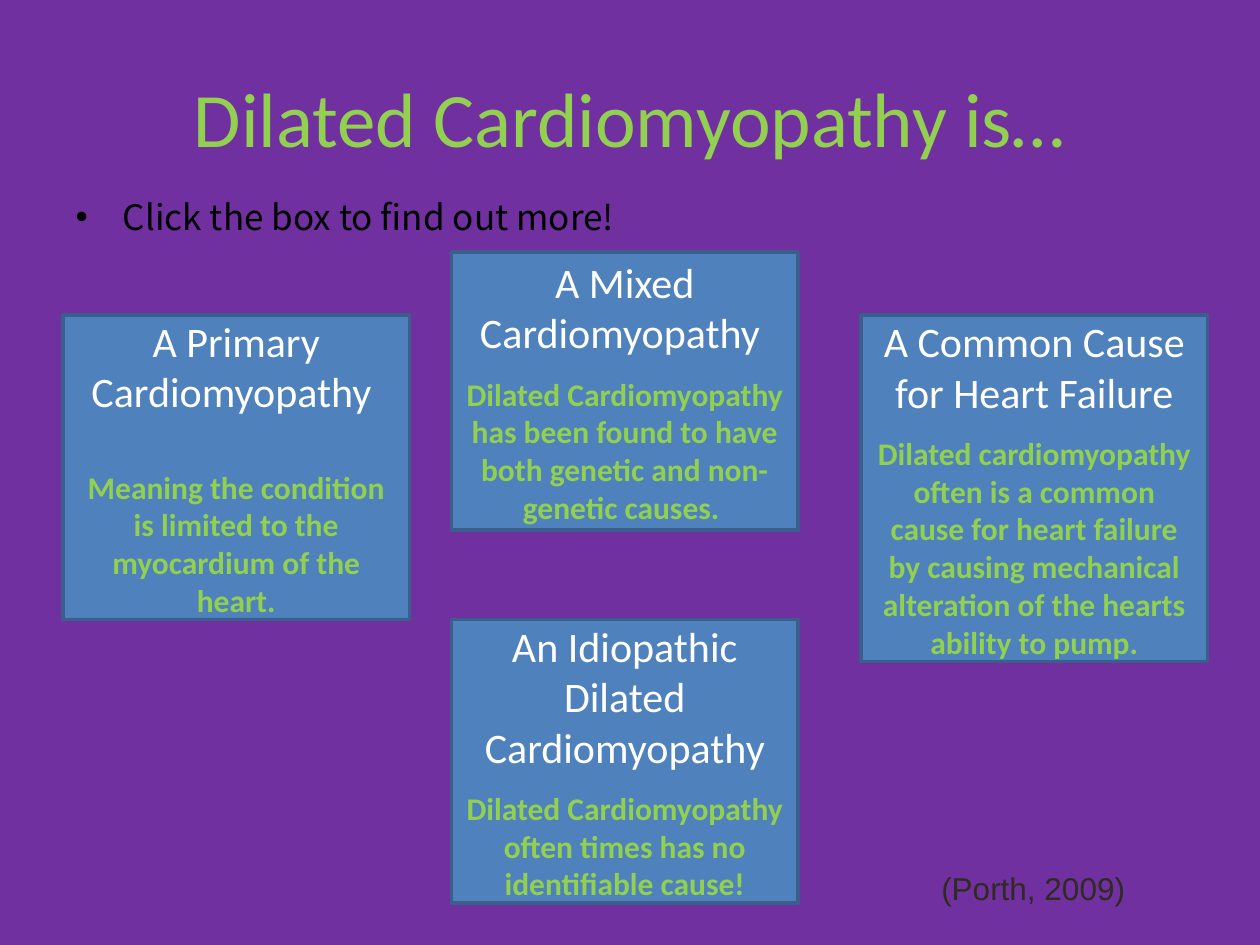
import pptx
import pptx.dml.color
import pptx.enum.shapes
import pptx.enum.text
import pptx.util

RGBColor = pptx.dml.color.RGBColor
ALIGN = pptx.enum.text.PP_ALIGN
ANCHOR = pptx.enum.text.MSO_ANCHOR
AUTO_SIZE = pptx.enum.text.MSO_AUTO_SIZE
Pt = pptx.util.Pt

PURPLE = RGBColor(0x70, 0x30, 0xA0)
GREEN = RGBColor(0x92, 0xD0, 0x50)
BLUE = RGBColor(0x4F, 0x81, 0xBD)
DARK_BLUE = RGBColor(0x3A, 0x5F, 0x8C)
WHITE = RGBColor(0xFF, 0xFF, 0xFF)
BLACK = RGBColor(0, 0, 0)
BROWN = RGBColor(0x2F, 0x2B, 0x20)

COLUMNS, ROWS = 120, 90
BOX_WIDTH = 33
LEFT, MIDDLE, RIGHT = 6, 43, 82

# column, row, height in rows, heading, gap in points, explanation
BOXES = [
    (LEFT, 30, 29, "A Primary Cardiomyopathy ", 29.3,
     "Meaning the condition is limited to the myocardium of the heart."),
    (RIGHT, 30, 33, "A Common Cause for Heart Failure", 9.8,
     "Dilated cardiomyopathy often is a common cause for heart failure by "
     "causing mechanical alteration of the hearts ability to pump."),
    (MIDDLE, 59, 27, "An Idiopathic Dilated Cardiomyopathy", 9.8,
     "Dilated Cardiomyopathy often times has no identifiable cause!"),
    (MIDDLE, 24, 26.5, "A Mixed Cardiomyopathy ", 9.8,
     "Dilated Cardiomyopathy has been found to have both genetic and "
     "non-genetic causes. "),
]


def write(paragraph, text, *, size, color, font="Calibri", bold=False,
          align=ALIGN.CENTER, before=0):
    paragraph.alignment = align
    paragraph.space_before = Pt(before)
    run = paragraph.add_run()
    run.text = text
    run.font.name = font
    run.font.size = Pt(size)
    run.font.bold = bold
    run.font.color.rgb = color


class SlideBuilder:
    def __init__(self, presentation):
        self.cell_width = presentation.slide_width / COLUMNS
        self.cell_height = presentation.slide_height / ROWS
        self.slide = presentation.slides.add_slide(presentation.slide_layouts[1])
        background = self.slide.background.fill
        background.solid()
        background.fore_color.rgb = PURPLE

    def area(self, column, row, width, height):
        """Turn grid cells into left, top, width and height."""
        return (round(column * self.cell_width), round(row * self.cell_height),
                round(width * self.cell_width), round(height * self.cell_height))

    def placeholder(self, index, cells, text, anchor, **text_format):
        shape = self.slide.placeholders[index]
        shape.left, shape.top, shape.width, shape.height = self.area(*cells)
        frame = shape.text_frame
        frame.auto_size = AUTO_SIZE.NONE
        frame.vertical_anchor = anchor
        write(frame.paragraphs[0], text, **text_format)

    def box(self, column, row, height, heading, gap, explanation):
        shape = self.slide.shapes.add_shape(
            pptx.enum.shapes.MSO_SHAPE.RECTANGLE,
            *self.area(column, row, BOX_WIDTH, height))
        shape.shadow.inherit = False
        shape.fill.solid()
        shape.fill.fore_color.rgb = BLUE
        shape.line.color.rgb = DARK_BLUE
        shape.line.width = Pt(2)
        frame = shape.text_frame
        frame.word_wrap = True
        frame.vertical_anchor = ANCHOR.MIDDLE
        write(frame.paragraphs[0], heading, size=24, color=WHITE)
        write(frame.add_paragraph(), explanation, size=18, color=GREEN,
              bold=True, before=gap)

    def label(self, cells, text, **text_format):
        frame = self.slide.shapes.add_textbox(*self.area(*cells)).text_frame
        frame.word_wrap = False
        frame.auto_size = AUTO_SIZE.SHAPE_TO_FIT_TEXT
        write(frame.paragraphs[0], text, **text_format)


def main():
    presentation = pptx.Presentation()
    presentation.slide_width = pptx.util.Inches(10)
    presentation.slide_height = pptx.util.Inches(7.5)

    builder = SlideBuilder(presentation)
    builder.placeholder(0, (LEFT, 3.6, 108, 15), "Dilated Cardiomyopathy is…",
                        ANCHOR.MIDDLE, size=44, color=GREEN)
    builder.placeholder(1, (LEFT, 18, 108, 9), "Click the box to find out more!",
                        ANCHOR.TOP, size=20, color=BLACK, before=4,
                        font="Noto Sans CJK KR", align=ALIGN.LEFT)
    for box in BOXES:
        builder.box(*box)
    builder.label((88.4, 82.2, 20, 4.8), "(Porth, 2009)",
                  size=18, color=BROWN, font="Arial")

    presentation.save("out.pptx")


if __name__ == "__main__":
    main()
